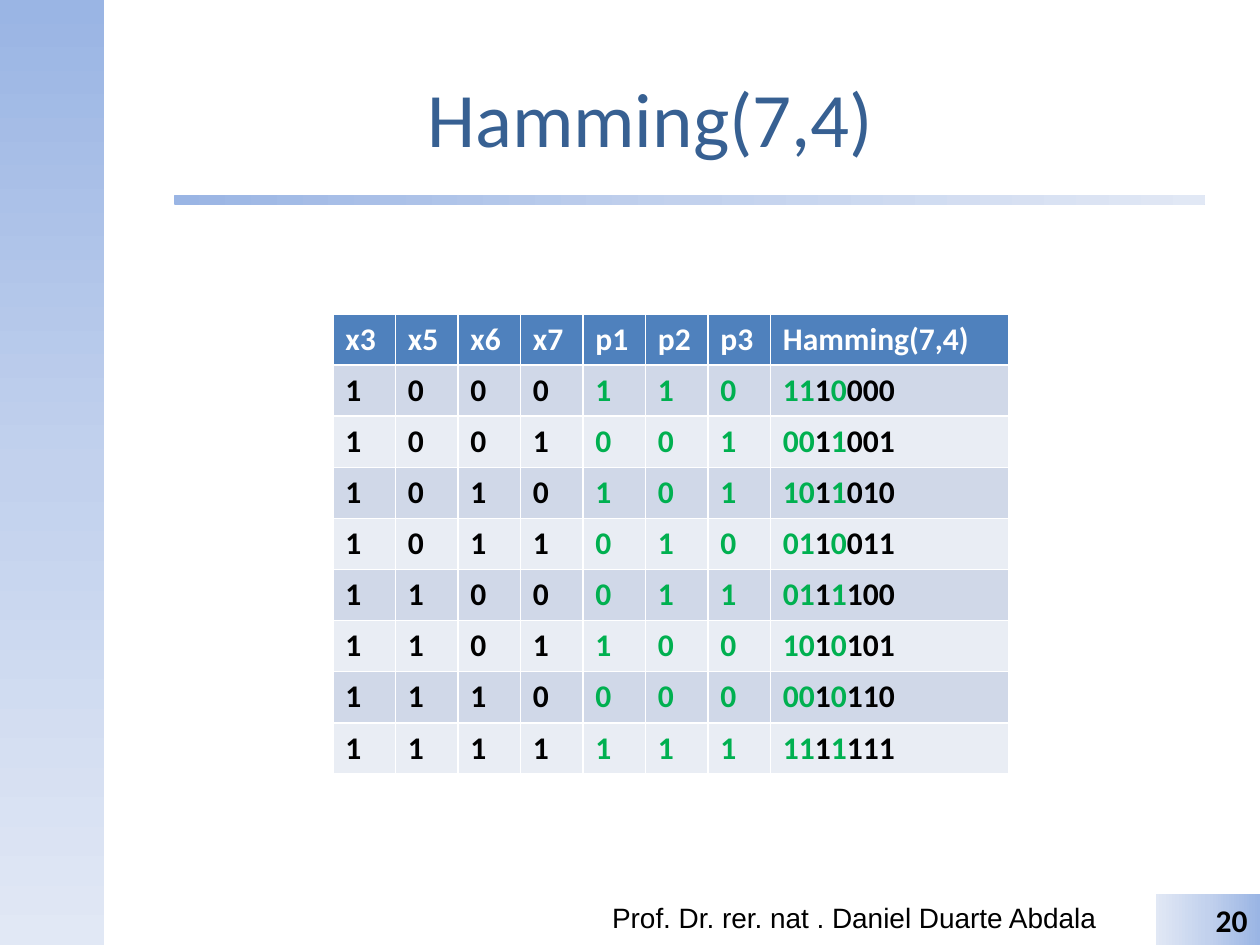
from copy import deepcopy
from itertools import groupby

from pptx import Presentation
from pptx.dml.color import RGBColor
from pptx.enum.shapes import MSO_SHAPE
from pptx.enum.text import MSO_ANCHOR, PP_ALIGN
from pptx.oxml.ns import qn
from pptx.util import Cm, Pt

TITLE = "Hamming(7,4)"
AUTHOR = "Prof. Dr. rer. nat . Daniel Duarte Abdala"
PAGE_NUMBER = "20"
HEADERS = ["x3", "x5", "x6", "x7", "p1", "p2", "p3", "Hamming(7,4)"]
DATA_AND_PARITY = [
    ("1000", "110"),
    ("1001", "001"),
    ("1010", "101"),
    ("1011", "010"),
    ("1100", "011"),
    ("1101", "100"),
    ("1110", "000"),
    ("1111", "111"),
]
CODEWORD_ORDER = ["p1", "p2", "x3", "p3", "x5", "x6", "x7"]

COLORS = {
    "title": "376092",
    "data": "000000",
    "parity": "00B050",
    "header_text": "FFFFFF",
    "header": "4F81BD",
    "odd_row": "D0D8E8",
    "even_row": "E9EDF4",
}
GRADIENT = [(0, "9AB5E4"), (0.5, "C2D1ED"), (1, "E1E8F5")]
BIT_WIDTH, CODEWORD_WIDTH, ROW_HEIGHT = 1.26, 4.8, 1.03


def write_text(frame, spans, size=18, font="Calibri", bold=False,
               align=PP_ALIGN.LEFT, anchor=MSO_ANCHOR.TOP):
    frame.word_wrap = True
    frame.vertical_anchor = anchor
    paragraph = frame.paragraphs[0]
    paragraph.alignment = align
    for text, color in spans:
        span = paragraph.add_run()
        span.text = text
        span.font.size = Pt(size)
        span.font.name = font
        span.font.bold = bold
        span.font.color.rgb = RGBColor.from_string(COLORS[color])


def add_text_box(page, place, spans, **text_format):
    box = page.shapes.add_textbox(*map(Cm, place))
    write_text(box.text_frame, spans, **text_format)


def add_gradient_shape(page, kind, place, angle):
    shape = page.shapes.add_shape(kind, *map(Cm, place))
    shape.shadow.inherit = False
    shape.line.fill.background()
    shape.fill.gradient()
    shape.fill.gradient_angle = angle
    stop_list = next(shape.element.iter(qn("a:gsLst")))
    stop_list.append(deepcopy(stop_list[0]))
    for stop, (position, color) in zip(shape.fill.gradient_stops, GRADIENT):
        stop.position = position
        stop.color.rgb = RGBColor.from_string(color)
    return shape


def bit_color(name):
    return "parity" if name.startswith("p") else "data"


def codeword_spans(bits):
    return [("".join(bits[name] for name in names), color)
            for color, names in groupby(CODEWORD_ORDER, bit_color)]


def table_rows():
    yield "header", [[(name, "header_text")] for name in HEADERS]
    for index, (data, parity) in enumerate(DATA_AND_PARITY):
        bits = dict(zip(HEADERS, data + parity))
        cells = [[(bit, bit_color(name))] for name, bit in bits.items()]
        yield ("even_row" if index % 2 else "odd_row"), cells + [codeword_spans(bits)]


def add_code_table(page):
    rows = list(table_rows())
    widths = [BIT_WIDTH] * (len(HEADERS) - 1) + [CODEWORD_WIDTH]
    place = (6.71, 6.33, sum(widths), ROW_HEIGHT * len(rows))
    table = page.shapes.add_table(len(rows), len(widths), *map(Cm, place)).table
    for column, width in zip(table.columns, widths):
        column.width = Cm(width)
    for row, (fill, contents) in zip(table.rows, rows):
        row.height = Cm(ROW_HEIGHT)
        for cell, spans in zip(row.cells, contents):
            cell.fill.solid()
            cell.fill.fore_color.rgb = RGBColor.from_string(COLORS[fill])
            write_text(cell.text_frame, spans, bold=True)


def main():
    deck = Presentation()
    deck.slide_width, deck.slide_height = Cm(25.4), Cm(19.05)
    page = deck.slides.add_slide(deck.slide_layouts[6])

    add_gradient_shape(page, MSO_SHAPE.RECTANGLE, (0, 0, 2.1, 19.05), 270)
    add_gradient_shape(page, MSO_SHAPE.ROUNDED_RECTANGLE, (3.5, 3.93, 20.8, 0.2), 0)
    add_text_box(page, (2.1, 0.76, 22.03, 3.17), [(TITLE, "title")], size=44,
                 align=PP_ALIGN.CENTER, anchor=MSO_ANCHOR.MIDDLE)
    add_text_box(page, (12.09, 18.03, 10.64, 1.02), [(AUTHOR, "data")],
                 size=16, font="Arial")
    badge = add_gradient_shape(page, MSO_SHAPE.RECTANGLE, (23.3, 18.03, 2.1, 1.02), 180)
    write_text(badge.text_frame, [(PAGE_NUMBER, "data")], bold=True,
               align=PP_ALIGN.RIGHT)
    add_code_table(page)
    deck.save("out.pptx")


if __name__ == "__main__":
    main()
